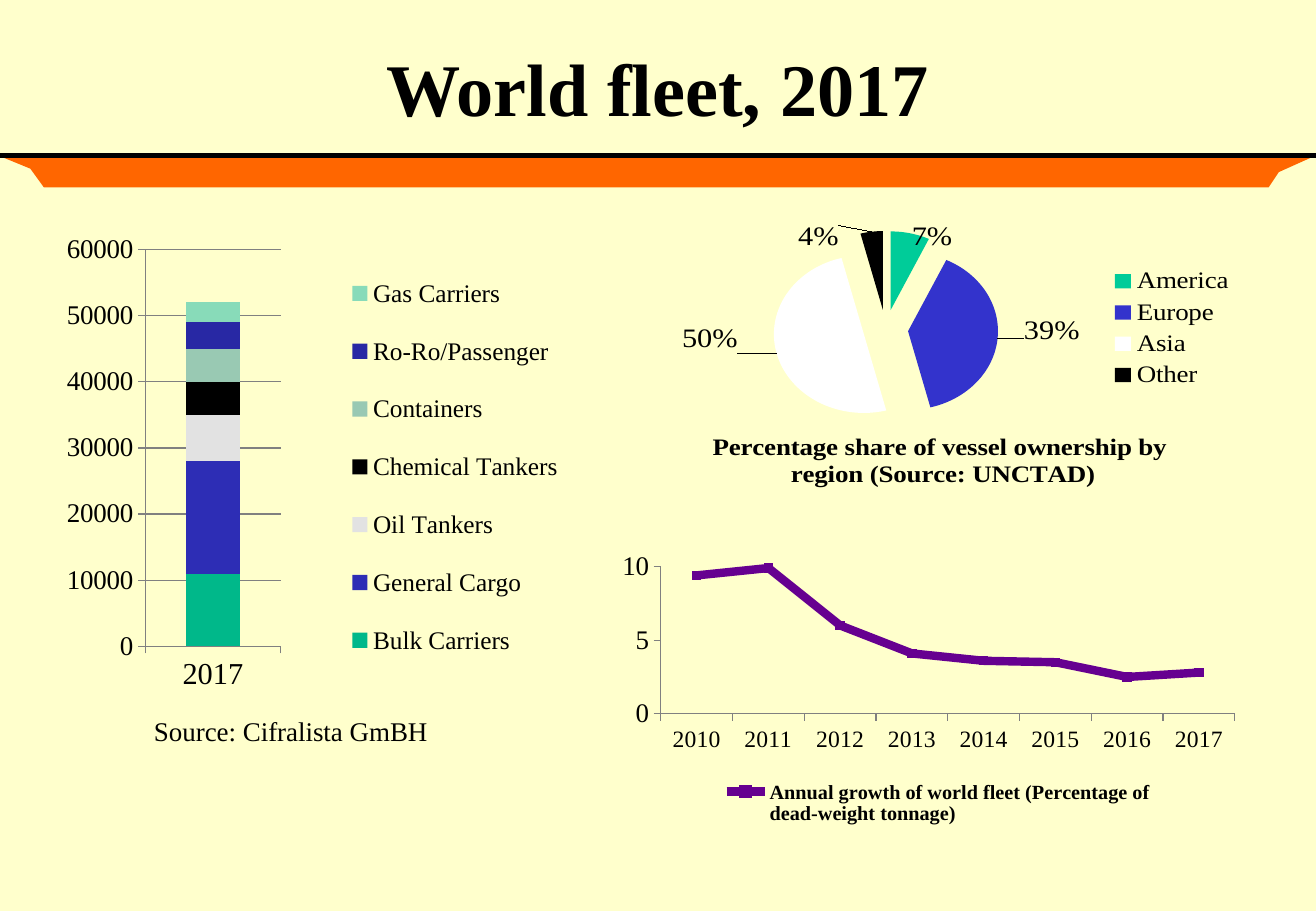
import lxml.etree
import pptx
import pptx.chart.data
import pptx.dml.color
import pptx.enum.chart
import pptx.enum.shapes
import pptx.enum.text
import pptx.oxml
import pptx.oxml.ns
import pptx.util

Pt = pptx.util.Pt
qn = pptx.oxml.ns.qn
charts = pptx.enum.chart
FONT = "Times New Roman"


def colour(hex_string):
    return pptx.dml.color.RGBColor.from_string(hex_string)


def add_text(text, left, top, width, height, size, bold=False, align="LEFT"):
    frame = slide.shapes.add_textbox(Pt(left), Pt(top), Pt(width), Pt(height)).text_frame
    frame.word_wrap = True
    paragraph = frame.paragraphs[0]
    paragraph.alignment = pptx.enum.text.PP_ALIGN[align]
    run = paragraph.add_run()
    run.text = text
    run.font.name = FONT
    run.font.size = Pt(size)
    run.font.bold = bold
    run.font.color.rgb = colour("000000")


deck = pptx.Presentation()
deck.slide_width = Pt(780)
deck.slide_height = Pt(540)
slide = deck.slides.add_slide(deck.slide_layouts[6])
slide.background.fill.solid()
slide.background.fill.fore_color.rgb = colour("FFFFCC")

band_outline = slide.shapes.build_freeform(0.7, 92.9, scale=12700)
band_outline.add_line_segments(
    [(777.6, 92.9), (758.2, 101.5), (751.7, 110.9), (25.9, 110.9), (18, 100.1)], close=True
)
band = band_outline.convert_to_shape()
band.shadow.inherit = False
band.fill.solid()
band.fill.fore_color.rgb = colour("FF6600")
band.line.fill.background()

rule = slide.shapes.add_connector(
    pptx.enum.shapes.MSO_CONNECTOR.STRAIGHT, Pt(0), Pt(92.2), Pt(780), Pt(92.2)
)
rule.line.color.rgb = colour("000000")
rule.line.width = Pt(3)
lxml.etree.SubElement(rule._element.spPr, qn("a:effectLst"))

add_text("World fleet, 2017", 38.9, 21.6, 702, 90, size=44, bold=True, align="CENTER")

vessel_types = [
    ("Bulk Carriers", 11000, "00B88A"),
    ("General Cargo", 17000, "2D2DB5"),
    ("Oil Tankers", 7000, "E2E2E2"),
    ("Chemical Tankers", 5000, "000000"),
    ("Containers", 5000, "99C9B3"),
    ("Ro-Ro/Passenger", 4000, "2828A4"),
    ("Gas Carriers", 3000, "88DBB9"),
]
fleet_data = pptx.chart.data.CategoryChartData()
fleet_data.categories = ["2017"]
for vessel_type, ships, _ in vessel_types:
    fleet_data.add_series(vessel_type, [ships])
fleet = slide.shapes.add_chart(
    charts.XL_CHART_TYPE.COLUMN_STACKED, Pt(39.6), Pt(133.9), Pt(308.9), Pt(280.1), fleet_data
).chart
fleet.plots[0].gap_width = 150
fleet.plots[0].overlap = 100
for series, (_, _, fill) in zip(fleet.plots[0].series, vessel_types):
    series.format.fill.solid()
    series.format.fill.fore_color.rgb = colour(fill)

growth_data = pptx.chart.data.CategoryChartData()
growth_data.categories = [str(year) for year in range(2010, 2018)]
growth_data.add_series(
    "Annual growth of world fleet (Percentage of dead-weight tonnage)",
    [9.4, 9.9, 6, 4.1, 3.6, 3.5, 2.5, 2.8],
)
growth = slide.shapes.add_chart(
    charts.XL_CHART_TYPE.LINE_MARKERS_STACKED, Pt(361.1), Pt(326.9), Pt(382.3), Pt(168.5), growth_data
).chart
growth_line = growth.plots[0].series[0]
growth_line.smooth = False
growth_line.format.line.color.rgb = colour("660090")
growth_line.format.line.width = Pt(5)
growth_line.marker.style = charts.XL_MARKER_STYLE.SQUARE
growth_line.marker.size = 5
growth_line.marker.format.fill.solid()
growth_line.marker.format.fill.fore_color.rgb = colour("660090")
growth_line.marker.format.line.color.rgb = colour("660090")

regions = [
    ("America", 0.07, "00CC99", None),
    ("Europe", 0.39, "3333CC", (0.03, -0.09)),
    ("Asia", 0.5, "FFFFFF", (-0.05, -0.12)),
    ("Other", 0.04, "000000", (-0.05, 0)),
]
ownership_data = pptx.chart.data.CategoryChartData(number_format="0%")
ownership_data.categories = [region for region, _, _, _ in regions]
ownership_data.add_series("Series 1", [share for _, share, _, _ in regions])
ownership = slide.shapes.add_chart(
    charts.XL_CHART_TYPE.PIE, Pt(359.3), Pt(116.6), Pt(380.9), Pt(175.7), ownership_data
).chart
ownership_pie = ownership.plots[0].series[0]
explosion = pptx.oxml.parse_xml(
    f'<c:explosion xmlns:c="{pptx.oxml.ns.nsuri("c")}" val="25"/>'
)
ownership_pie._element.find(qn("c:tx")).addnext(explosion)
ownership.plots[0].vary_by_categories = True
shares = ownership_pie.data_labels
shares.show_value = True
shares.show_percentage = False
shares.number_format = "0%"
shares.number_format_is_linked = False
shares.position = charts.XL_LABEL_POSITION.OUTSIDE_END
shares.font.size = Pt(18)
for index, (_, _, fill, label_shift) in enumerate(regions):
    point = ownership_pie.points[index]
    point.format.fill.solid()
    point.format.fill.fore_color.rgb = colour(fill)
    if label_shift:
        point.data_label.position = charts.XL_LABEL_POSITION.OUTSIDE_END
        point.data_label.font.size = Pt(18)

for chart, legend_size, legend_bold in [(fleet, 15, False), (growth, 12, True), (ownership, 16, False)]:
    chart.has_title = chart is ownership
    chart.font.name = FONT
    chart.font.size = Pt(18)
    chart.font.color.rgb = colour("000000")
    chart.has_legend = True
    chart.legend.position = charts.XL_LEGEND_POSITION.RIGHT
    chart.legend.include_in_layout = False
    chart.legend.font.name = FONT
    chart.legend.font.size = Pt(legend_size)
    chart.legend.font.bold = legend_bold
    chart.legend.font.color.rgb = colour("000000")

heading = ownership.chart_title.text_frame.paragraphs[0]
heading.add_run().text = "Percentage share of vessel ownership by "
heading.add_line_break()
heading.add_run().text = "region (Source: UNCTAD)"
for run in heading.runs:
    run.font.name = FONT
    run.font.size = Pt(16)
    run.font.bold = True
    run.font.color.rgb = colour("000000")

for chart, year_size, top_value, step in [(fleet, 18, 60000, 10000), (growth, 14, 10, 5)]:
    chart.plots[0].vary_by_categories = False
    chart.value_axis.minimum_scale = 0
    chart.value_axis.maximum_scale = top_value
    chart.value_axis.major_unit = step
    chart.value_axis.has_major_gridlines = chart is fleet
    for axis, size in [(chart.category_axis, year_size), (chart.value_axis, 16)]:
        axis.major_tick_mark = charts.XL_TICK_MARK.OUTSIDE
        axis.format.line.color.rgb = colour("808080")
        axis.format.line.width = Pt(0.75)
        axis.tick_labels.font.size = Pt(size)
fleet.value_axis.major_gridlines.format.line.color.rgb = colour("808080")
fleet.value_axis.major_gridlines.format.line.width = Pt(0.75)

placements = [
    (fleet, "plotArea", (0.15, 0.05, 0.26, 0.84)),
    (fleet, "legend", (0.53, 0.05, 0.43, 0.92)),
    (growth, "plotArea", (0.08, 0.05, 0.89, 0.52)),
    (growth, "legend", (0.17, 0.79, 0.68, 0.19)),
    (ownership, "plotArea", (0.26, 0.02, 0.35, 0.79)),
    (ownership, "legend", (0.77, 0.16, 0.22, 0.5)),
    (ownership, "title", (0.16, 0.8)),
]
parts = [(chart._chartSpace.find(".//" + qn("c:" + name)), name, place) for chart, name, place in placements]
shifts = [shift for _, _, _, shift in regions if shift]
for label, shift in zip(ownership_pie._element.iter(qn("c:dLbl")), shifts):
    parts.append((label, "dLbl", shift))
for part, part_name, place in parts:
    for automatic in part.findall(qn("c:layout")):
        part.remove(automatic)
    layout = part.makeelement(qn("c:layout"), {})
    manual = lxml.etree.SubElement(layout, qn("c:manualLayout"))
    settings = list(zip("xywh", place))
    if part_name != "dLbl":
        settings = [("xMode", "edge"), ("yMode", "edge")] + settings
    if part_name == "plotArea":
        settings.insert(0, ("layoutTarget", "inner"))
    for setting, value in settings:
        lxml.etree.SubElement(manual, qn("c:" + setting)).set("val", str(value))
    part.insert(0 if part_name == "plotArea" else 1, layout)

add_text("Source: Cifralista GmBH", 84.2, 419.8, 234.7, 26.6, size=16)

deck.save("out.pptx")
